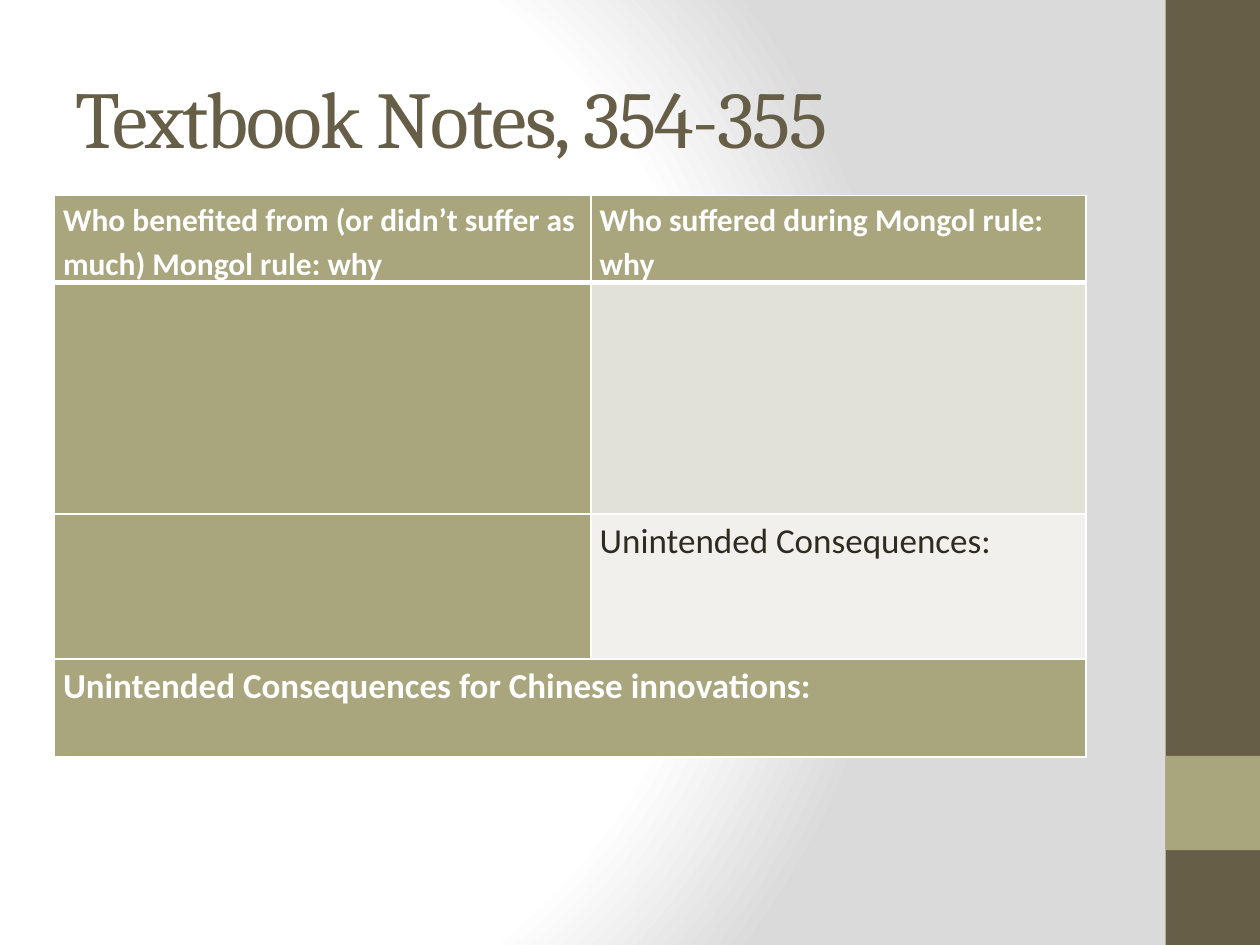
from lxml import etree
from pptx import Presentation
from pptx.dml.color import RGBColor
from pptx.enum.shapes import MSO_SHAPE
from pptx.enum.text import MSO_ANCHOR
from pptx.oxml import parse_xml
from pptx.oxml.ns import nsdecls, qn
from pptx.util import Cm, Pt

RECTANGLE = MSO_SHAPE.RECTANGLE
MIDDLE = MSO_ANCHOR.MIDDLE
COLORS = {
    "brown": "675E47",
    "olive": "A9A57C",
    "light": "E2E1D7",
    "pale": "F1F0EC",
    "white": "FFFFFF",
    "gray": "DADADA",
    "ink": "2F2B20",
}


def add_span(para, text, font, size, color, bold=False):
    span = para.add_run()
    span.text = text
    span.font.name = font
    span.font.size = Pt(size)
    span.font.bold = bold
    span.font.color.rgb = RGBColor.from_string(COLORS[color])
    return span


def add_border(cell, side, width):
    line = etree.SubElement(cell._tc.get_or_add_tcPr(), qn(f"a:ln{side}"), w=str(Pt(width)))
    fill = etree.SubElement(line, qn("a:solidFill"))
    etree.SubElement(fill, qn("a:srgbClr"), val=COLORS["white"])


deck = Presentation()
deck.slide_width = Cm(25.4)
deck.slide_height = Cm(19.05)
page = deck.slides.add_slide(deck.slide_layouts[6])

page.background.fill.gradient()
gradient = page._element.find(".//" + qn("a:gradFill"))
stops = "".join(
    f'<a:gs pos="{position * 1000}"><a:srgbClr val="{COLORS[color]}"/></a:gs>'
    for position, color in ((0, "white"), (75, "white"), (100, "gray"))
)
gradient.getparent().replace(gradient, parse_xml(
    f'<a:gradFill {nsdecls("a")} rotWithShape="1"><a:gsLst>{stops}</a:gsLst>'
    '<a:path path="circle"><a:fillToRect l="20000" t="50000" r="100000" b="50000"/></a:path>'
    '</a:gradFill>'
))

for top, height, color in ((0, 19.05, "brown"), (15.24, 1.9, "olive")):
    band = page.shapes.add_shape(RECTANGLE, Cm(23.5), Cm(top), Cm(1.9), Cm(height))
    band.shadow.inherit = False
    band.fill.solid()
    band.fill.fore_color.rgb = RGBColor.from_string(COLORS[color])
    band.line.fill.background()

title = page.shapes.add_textbox(Cm(1.27), Cm(0.76), Cm(21.16), Cm(3.18))
title.text_frame.word_wrap = True
title.text_frame.vertical_anchor = MIDDLE
span = add_span(title.text_frame.paragraphs[0], "Textbook Notes, 354-355", "Cambria", 46, "brown")
span.font._element.set("spc", "-100")

column_widths = (10.82, 9.98)
row_heights = (1.32, 4.67, 2.92, 1.98)
fills = (("olive", "olive"), ("olive", "light"), ("olive", "pale"), ("olive", "olive"))
texts = {
    (0, 0): ("Who benefited from (or didn’t suffer as much) Mongol rule: why", 18, "white", True),
    (0, 1): ("Who suffered during Mongol rule: why", 18, "white", True),
    (2, 1): ("Unintended Consequences:", 20, "ink", False),
    (3, 0): ("Unintended Consequences for Chinese innovations:", 20, "white", True),
}
table = page.shapes.add_table(
    len(row_heights), len(column_widths), Cm(1.09), Cm(3.94),
    Cm(sum(column_widths)), Cm(sum(row_heights)),
).table
for column, width in zip(table.columns, column_widths):
    column.width = Cm(width)
for row, height in zip(table.rows, row_heights):
    row.height = Cm(height)
table.cell(3, 0).merge(table.cell(3, 1))

for row_index, row_fills in enumerate(fills):
    for column_index, color in enumerate(row_fills):
        cell = table.cell(row_index, column_index)
        cell.margin_left = cell.margin_right = Cm(0.18)
        cell.margin_top = cell.margin_bottom = Cm(0)
        add_border(cell, "L", 1)
        add_border(cell, "R", 1)
        add_border(cell, "T", 3 if row_index == 1 else 1)
        add_border(cell, "B", 3 if row_index == 0 else 1)
        cell.fill.solid()
        cell.fill.fore_color.rgb = RGBColor.from_string(COLORS[color])
        if (row_index, column_index) in texts:
            text, size, ink, bold = texts[row_index, column_index]
            para = cell.text_frame.paragraphs[0]
            para.line_spacing = 1.15
            para.space_after = Pt(6)
            add_span(para, text, "Calibri", size, ink, bold)

deck.save("out.pptx")
